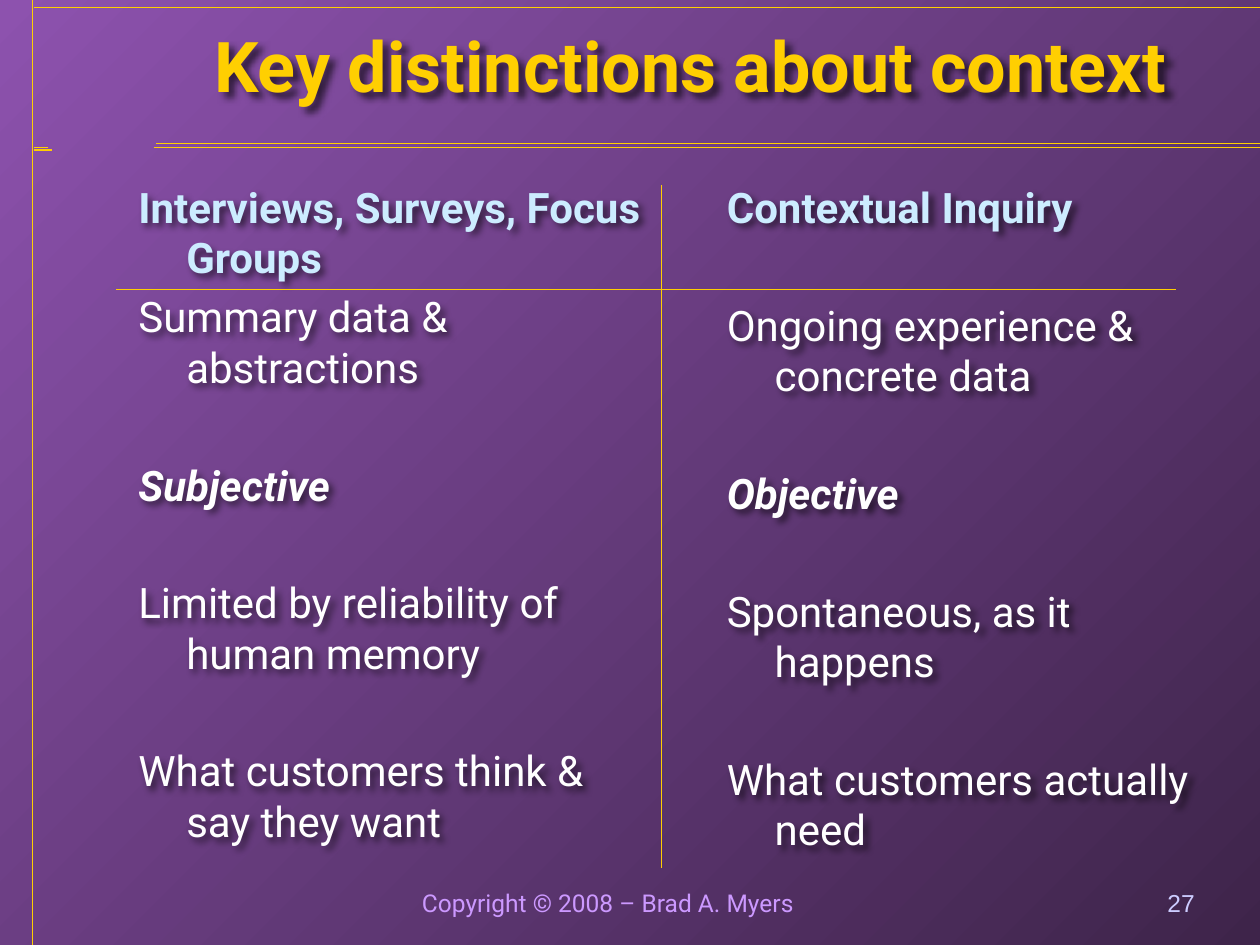
from lxml import etree
from pptx import Presentation
from pptx.dml.color import RGBColor
from pptx.enum import shapes, text
from pptx.oxml import ns
from pptx.util import Inches, Pt

HUES = {
    "gold": "FFCF01", "head": "CCECFF", "body": "FFFFFF",
    "foot": "CC99FF", "page": "CCCCFF", "light": "8D52AE", "dark": "3E244A",
}
NEAR, FAR = 5, 38.5  # points before a paragraph
LEFT = [
    ("Interviews, Surveys, Focus Groups", 0),
    ("Summary data & abstractions", NEAR),
    ("Subjective", FAR),
    ("Limited by reliability of human memory", FAR),
    ("What customers think &\vsay they want", FAR),
]
RIGHT = [
    ("Contextual Inquiry", 0),
    ("Ongoing experience & concrete data", FAR),
    ("Objective", FAR),
    ("Spontaneous, as it happens", FAR),
    ("What customers actually need", FAR),
]


def hue(name):
    return RGBColor.from_string(HUES[name])


def add_fx(shape):
    return etree.SubElement(shape._element.spPr, ns.qn("a:effectLst"))


def shade(shape):
    """Cast a soft shadow from the text of an unfilled box."""
    cast = etree.SubElement(add_fx(shape), ns.qn("a:outerShdw"), blurRad="50800",
                            dist="50800", dir="2700000", algn="ctr")
    tint = etree.SubElement(cast, ns.qn("a:srgbClr"), val="000000")
    etree.SubElement(tint, ns.qn("a:alpha"), val="60000")


def add_rule(slide, x1, y1, x2, y2):
    line = slide.shapes.add_connector(
        shapes.MSO_CONNECTOR.STRAIGHT,
        Inches(x1), Inches(y1), Inches(x2), Inches(y2))
    line.line.color.rgb = hue("gold")
    line.line.width = Pt(0.75)
    add_fx(line)


def add_box(slide, box, anchor):
    shape = slide.shapes.add_textbox(*map(Inches, box))
    shape.text_frame.word_wrap = True
    shape.text_frame.vertical_anchor = anchor
    return shape


def style(para, size, color, bold=False, face="Roboto"):
    font = para.font
    font.size, font.name, font.bold = Pt(size), face, bold
    font.color.rgb = hue(color)


def add_line(slide, box, words, size, color, align, anchor, **look):
    """Add a box that holds one line of text."""
    shape = add_box(slide, box, anchor)
    para = shape.text_frame.paragraphs[0]
    para.text = words
    para.alignment = align
    style(para, size, color, **look)
    return shape


def add_list(slide, box, items):
    """Add a column: a heading, then hanging paragraphs."""
    shape = add_box(slide, box, text.MSO_ANCHOR.TOP)
    shade(shape)
    frame = shape.text_frame
    for i, (words, gap) in enumerate(items):
        para = frame.add_paragraph() if i else frame.paragraphs[0]
        para.text = words
        props = para._p.get_or_add_pPr()
        props.set("marL", str(Inches(0.38)))
        props.set("indent", str(-Inches(0.38)))
        para.space_before = Pt(gap)
        key = i == 2
        style(para, 24, "body" if i else "head", bold=key or not i)
        para.font.italic = key


def add_frame(slide):
    """Paint the background and its border rules."""
    fill = slide.background.fill
    fill.gradient()
    fill.gradient_angle = 315
    for stop, name in zip(fill.gradient_stops, ("light", "dark")):
        stop.color.rgb = hue(name)
    for ends in [(1.24, 1.14, 10, 1.14), (1.22, 1.17, 10, 1.17),
                 (0.26, 0, 0.26, 7.5), (0.27, 0.06, 10, 0.06),
                 (0.27, 1.19, 0.41, 1.19), (0.27, 1.17, 0.38, 1.17)]:
        add_rule(slide, *ends)


def add_foot(slide, top, high):
    low = text.MSO_ANCHOR.BOTTOM
    add_line(slide, (3.25, top, 3.58, high), "Copyright © 2008 – Brad A. Myers",
             14, "foot", text.PP_ALIGN.LEFT, low)
    add_line(slide, (7.5, top, 2.08, high), "27",
             14, "page", text.PP_ALIGN.RIGHT, low, face="Arial")


def add_grid(slide, x, y, wide, high):
    """Place both columns and the cross of rules between them."""
    add_list(slide, (x, y, 4.42, high), LEFT)
    add_list(slide, (x + 4.67, y, 4, high), RIGHT)
    add_rule(slide, x - 0.08, y + 0.91, x + wide, y + 0.91)
    add_rule(slide, x + 4.25, y + 0.08, x + 4.25, y + 5.5)


def main():
    deck = Presentation()
    deck.slide_width, deck.slide_height = Inches(10), Inches(7.5)
    slide = deck.slides.add_slide(deck.slide_layouts[6])
    add_frame(slide)
    add_foot(slide, 6.83, 0.5)
    title = add_line(slide, (1.02, 0.04, 8.92, 0.94),
                     "Key distinctions about context", 40, "gold",
                     text.PP_ALIGN.CENTER, text.MSO_ANCHOR.MIDDLE, bold=True)
    shade(title)
    add_grid(slide, 1, 1.39, 8.33, 5.83)
    deck.save("out.pptx")


if __name__ == "__main__":
    main()
